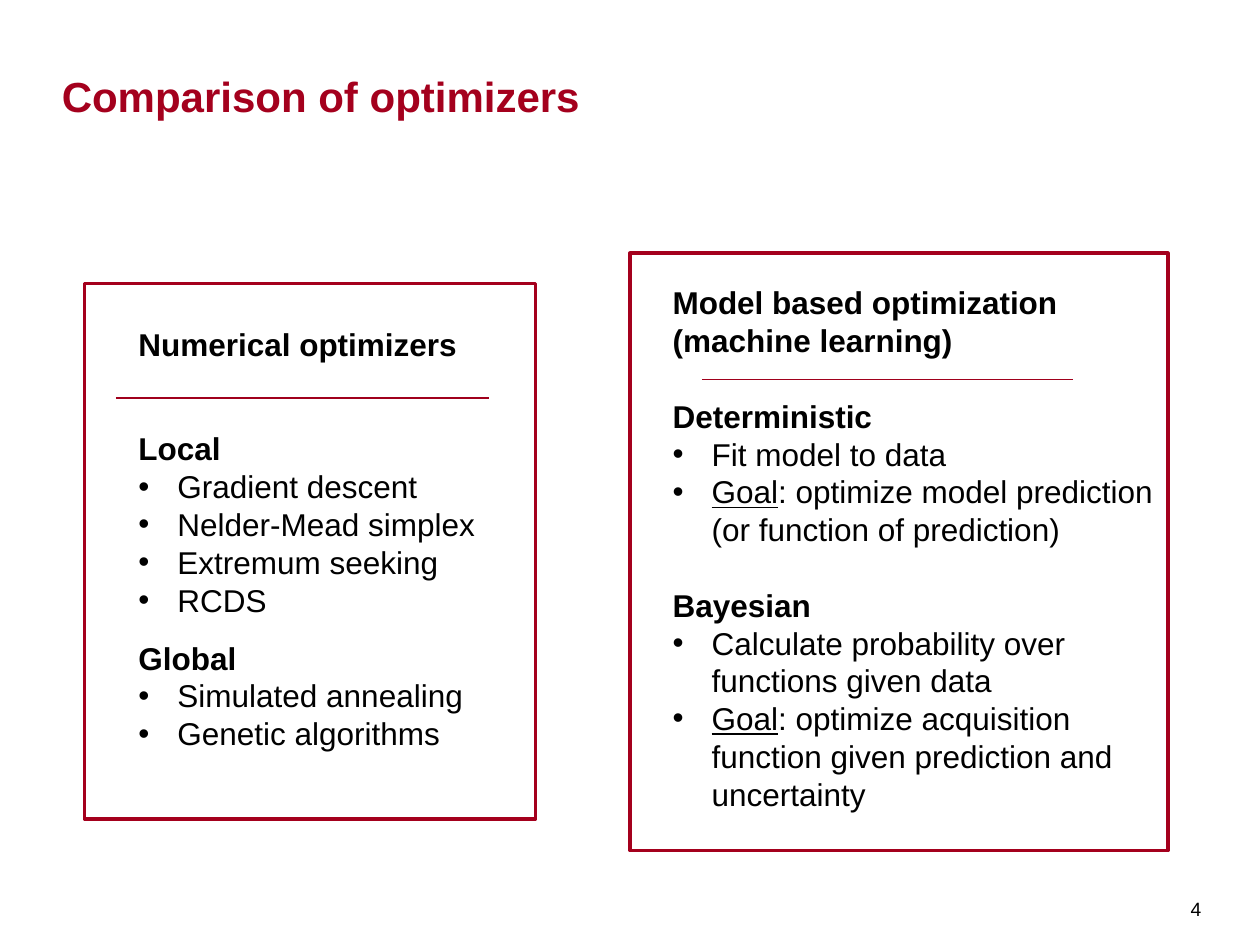
"""Build the slide that compares two families of optimizers."""
from dataclasses import dataclass

from lxml.etree import SubElement
from pptx import Presentation
from pptx.dml.color import RGBColor
from pptx.enum.shapes import MSO_CONNECTOR as Connector, MSO_SHAPE as Shape
from pptx.enum.text import MSO_ANCHOR as Anchor, PP_ALIGN as Align
from pptx.oxml.ns import qn
from pptx.util import Inches, Pt


@dataclass(frozen=True)
class Theme:
    """Colours, font and type sizes of the slide."""
    red: RGBColor = RGBColor(0xA4, 0x00, 0x1D)
    rule: RGBColor = RGBColor(0xA0, 0x00, 0x1C)
    black: RGBColor = RGBColor(0, 0, 0)
    white: RGBColor = RGBColor(255, 255, 255)
    font: str = "Arial"
    title: Pt = Pt(24)
    body: Pt = Pt(18)
    number: Pt = Pt(11)
    leading: Pt = Pt(21.6)


THEME = Theme()
HEADING, BULLET = "heading", "bullet"


def add_span(para, text, size, color, bold=False, underline=False):
    """Append one formatted run to a paragraph."""
    span = para.add_run()
    span.text = text
    font = span.font
    font.name, font.size, font.bold = THEME.font, size, bold
    font.underline = underline
    font.color.rgb = color


def set_bullet(para):
    """Give a paragraph a hanging round bullet."""
    properties = para._p.get_or_add_pPr()
    properties.set("marL", str(Inches(0.31)))
    properties.set("indent", str(Inches(-0.31)))
    SubElement(properties, qn("a:buFont")).set("typeface", THEME.font)
    SubElement(properties, qn("a:buChar")).set("char", "•")


def add_title(page, text):
    """Place and format the title placeholder."""
    title = page.shapes.title
    title.left, title.top = Inches(0.49), Inches(0.14)
    title.width, title.height = Inches(8.86), Inches(0.82)
    frame = title.text_frame
    frame.margin_left = frame.margin_top = 0
    frame.margin_right = frame.margin_bottom = 0
    frame.vertical_anchor = Anchor.BOTTOM
    para = frame.paragraphs[0]
    para.alignment = Align.LEFT
    add_span(para, text, THEME.title, THEME.red, bold=True)


def add_page_number(page, text):
    """Add the page number at the lower right."""
    box = page.shapes.add_textbox(
        Inches(9.37), Inches(6.91), Inches(0.35), Inches(0.59))
    frame = box.text_frame
    frame.word_wrap = True
    frame.vertical_anchor = Anchor.MIDDLE
    frame.margin_left = frame.margin_right = Inches(0.08)
    frame.margin_top, frame.margin_bottom = Inches(0.06), Inches(0.05)
    add_span(frame.paragraphs[0], text, THEME.number, THEME.black)


def add_panel(group, left, top, width, height):
    """Add a white rectangle with a red outline."""
    panel = group.shapes.add_shape(
        Shape.RECTANGLE, Inches(left), Inches(top), Inches(width), Inches(height))
    panel.shadow.inherit = False
    panel.fill.solid()
    panel.fill.fore_color.rgb = THEME.white
    panel.line.color.rgb = THEME.red
    panel.line.width = Pt(2)


def add_rule(group, left, right, top):
    """Add a thin horizontal rule."""
    rule = group.shapes.add_connector(
        Connector.STRAIGHT, Inches(left), Inches(top), Inches(right), Inches(top))
    rule.line.color.rgb = THEME.rule
    rule.line.width = Pt(0.75)
    SubElement(rule._element.spPr, qn("a:effectLst"))


def add_text(group, left, top, width, height, rows):
    """Add headings and bullets given as kind, lines of space before, spans."""
    box = group.shapes.add_textbox(
        Inches(left), Inches(top), Inches(width), Inches(height))
    frame = box.text_frame
    frame.word_wrap = True
    for index, (kind, gap, *spans) in enumerate(rows):
        para = frame.add_paragraph() if index else frame.paragraphs[0]
        para.line_spacing = THEME.leading
        if gap:
            para.space_before = THEME.leading * gap
        if kind == BULLET:
            set_bullet(para)
        for text in spans:
            add_span(para, text, THEME.body, THEME.black,
                     bold=kind == HEADING, underline=text == "Goal")


def add_numerical(page):
    """Add the panel of numerical optimizers."""
    group = page.shapes.add_group_shape()
    add_panel(group, 0.67, 2.25, 3.58, 4.25)
    add_text(group, 1, 2.53, 2.88, 0.49, [(HEADING, 0, "Numerical optimizers")])
    add_rule(group, 0.92, 3.88, 3.16)
    add_text(group, 1, 3.36, 3.08, 1.96, [
        (HEADING, 0, "Local"),
        (BULLET, 0, "Gradient descent"),
        (BULLET, 0, "Nelder-Mead simplex"),
        (BULLET, 0, "Extremum seeking"),
        (BULLET, 0, "RCDS"),
    ])
    add_text(group, 1, 5.02, 3.08, 1.23, [
        (HEADING, 0, "Global"),
        (BULLET, 0, "Simulated annealing"),
        (BULLET, 0, "Genetic algorithms"),
    ])


def add_model_based(page):
    """Add the panel of model based optimization."""
    group = page.shapes.add_group_shape()
    add_panel(group, 5, 2.01, 4.27, 4.74)
    add_text(group, 5.24, 2.2, 4.03, 4.34, [
        (HEADING, 0, "Model based optimization"),
        (HEADING, 0, "(machine learning)"),
        (HEADING, 1, "Deterministic"),
        (BULLET, 0, "Fit model to data"),
        (BULLET, 0, "Goal", ": optimize model prediction (or function of prediction)"),
        (HEADING, 1, "Bayesian"),
        (BULLET, 0, "Calculate probability over functions given data"),
        (BULLET, 0, "Goal",
         ": optimize acquisition function given prediction and uncertainty"),
    ])
    add_rule(group, 5.57, 8.52, 3.01)


def main():
    """Build and save the deck."""
    deck = Presentation()
    deck.slide_width, deck.slide_height = Inches(10), Inches(7.5)
    page = deck.slides.add_slide(deck.slide_layouts.get_by_name("Title Only"))
    add_page_number(page, "4")
    add_title(page, "Comparison of optimizers")
    add_numerical(page)
    add_model_based(page)
    deck.save("out.pptx")


if __name__ == "__main__":
    main()
